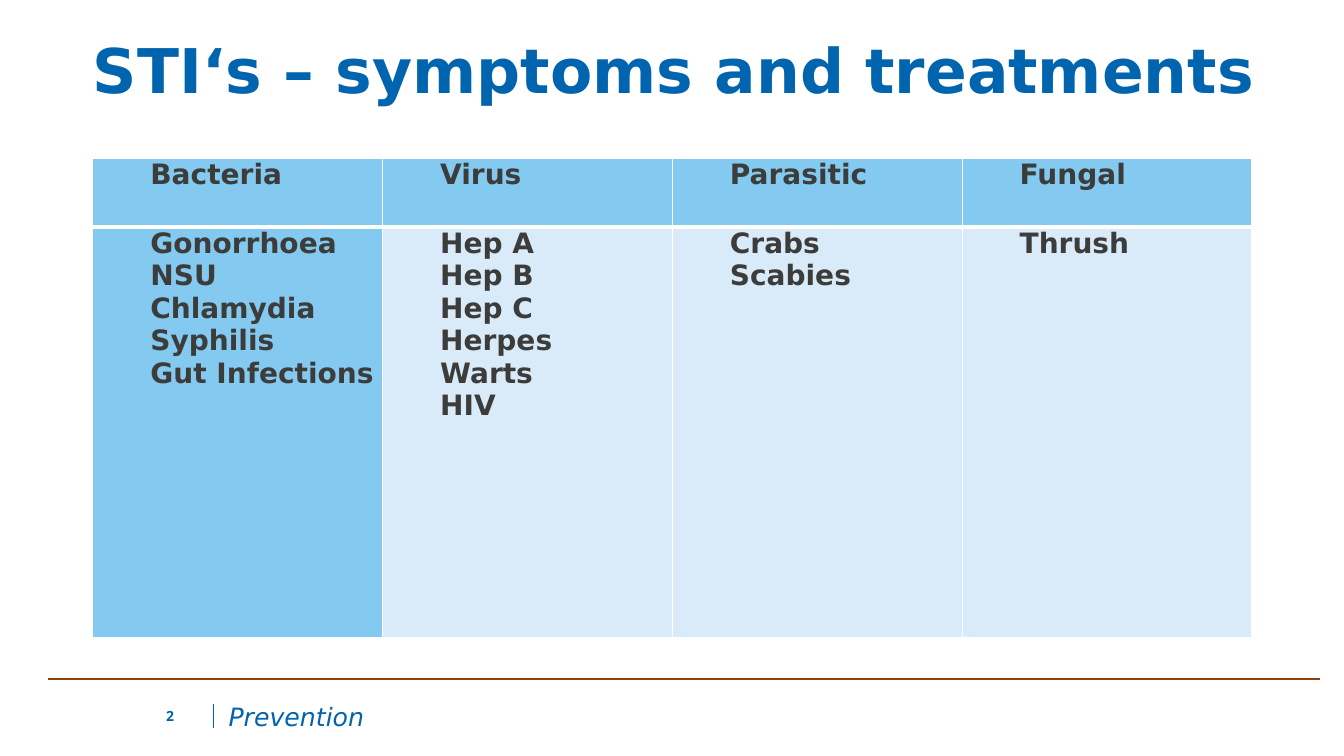
"""Build a slide that lists infections by type in a table."""
from dataclasses import dataclass

from lxml import etree
from pptx import Presentation
from pptx.dml.color import RGBColor
from pptx.enum.shapes import MSO_CONNECTOR
from pptx.enum.text import MSO_ANCHOR, PP_ALIGN
from pptx.oxml.ns import qn
from pptx.util import Cm, Pt

LINE = MSO_CONNECTOR.STRAIGHT
TOP, MIDDLE = MSO_ANCHOR.TOP, MSO_ANCHOR.MIDDLE
LEFT, CENTER = PP_ALIGN.LEFT, PP_ALIGN.CENTER
HEX = {"blue": "0064AE", "brown": "913E0B", "text": "3C3C3B",
       "head": "83C9F0", "body": "D9EBF9", "edge": "FFFFFF"}
SANS = "DejaVu Sans"


@dataclass
class Label:
    text: str
    box: tuple[float, float, float, float]
    style: dict


@dataclass
class Rule:
    start: tuple[float, float]
    end: tuple[float, float]
    color: str
    width: float


@dataclass
class Group:
    name: str
    items: list[str]


LABELS = [
    Label("STI‘s – symptoms and treatments", (1.32, 0.41, 31.34, 2.87),
          {"size": 44, "bold": True, "align": CENTER, "space": 0.9}),
    Label("Prevention", (5.51, 17.65, 11.43, 0.79), {"size": 18, "italic": True}),
    Label("2", (3.94, 17.65, 1.32, 0.79),
          {"size": 10, "bold": True, "face": "Open Sans"}),
]
RULES = [
    Rule((1.22, 17.12), (33.27, 17.12), "brown", 1.5),
    Rule((5.38, 18.34), (5.38, 17.75), "blue", 0.75),
]
GROUPS = [
    Group("Bacteria", ["Gonorrhoea", "NSU", "Chlamydia", "Syphilis", "Gut Infections"]),
    Group("Virus", ["Hep A", "Hep B", "Hep C", "Herpes", "Warts", "HIV"]),
    Group("Parasitic", ["Crabs", "Scabies"]),
    Group("Fungal", ["Thrush"]),
]
WIDTH = 29.21
ROWS = (1.73, 10.34)


def write(frame, lines: list[str], *, size: float, color: str = "blue",
          face: str = SANS, bold: bool = False, italic: bool = False,
          align=LEFT, space: float = 1.0, indent: float = 0) -> None:
    for pos, line in enumerate(lines):
        para = frame.paragraphs[0] if pos == 0 else frame.add_paragraph()
        para.alignment = align
        para.line_spacing = space
        para._p.get_or_add_pPr().set("marL", str(Cm(indent)))
        run = para.add_run()
        run.text = line
        font = run.font
        font.name, font.size = face, Pt(size)
        font.bold, font.italic = bold, italic
        font.color.rgb = RGBColor.from_string(HEX[color])


def add_label(slide, label: Label) -> None:
    frame = slide.shapes.add_textbox(*map(Cm, label.box)).text_frame
    frame.word_wrap = True
    frame.vertical_anchor = MIDDLE
    write(frame, [label.text], **label.style)


def add_rule(slide, rule: Rule) -> None:
    line = slide.shapes.add_connector(LINE, *map(Cm, rule.start + rule.end))
    line.line.color.rgb = RGBColor.from_string(HEX[rule.color])
    line.line.width = Pt(rule.width)
    etree.SubElement(line._element.spPr, qn("a:effectLst"))


def add_edges(cell, widths: dict[str, float]) -> None:
    props = cell._tc.get_or_add_tcPr()
    for pos, (side, width) in enumerate(widths.items()):
        edge = etree.Element(qn(f"a:ln{side}"), w=str(Pt(width)))
        fill = etree.SubElement(edge, qn("a:solidFill"))
        etree.SubElement(fill, qn("a:srgbClr"), val=HEX["edge"])
        props.insert(pos, edge)


def fill_cell(cell, lines: list[str], color: str, widths: dict[str, float]) -> None:
    cell.margin_left = cell.margin_right = Cm(0.18)
    cell.margin_top = cell.margin_bottom = 0
    cell.vertical_anchor = TOP
    cell.fill.solid()
    cell.fill.fore_color.rgb = RGBColor.from_string(HEX[color])
    add_edges(cell, widths)
    write(cell.text_frame, lines, size=20, color="text", bold=True, indent=1.27)


def add_groups(slide) -> None:
    table = slide.shapes.add_table(
        len(ROWS), len(GROUPS), Cm(2.34), Cm(3.99), Cm(WIDTH), Cm(sum(ROWS))).table
    for row, height in zip(table.rows, ROWS):
        row.height = Cm(height)
    for col, group in enumerate(GROUPS):
        table.columns[col].width = Cm(WIDTH / len(GROUPS))
        fill_cell(table.cell(0, col), [group.name], "head",
                  {"L": 1, "R": 1, "T": 1, "B": 3})
        fill_cell(table.cell(1, col), group.items, "body" if col else "head",
                  {"L": 1, "R": 1, "T": 3, "B": 1})


def main() -> None:
    deck = Presentation()
    deck.slide_width, deck.slide_height = Cm(33.87), Cm(19.05)
    slide = deck.slides.add_slide(deck.slide_layouts[6])
    for rule in RULES:
        add_rule(slide, rule)
    add_groups(slide)
    for label in LABELS:
        add_label(slide, label)
    deck.save("out.pptx")


if __name__ == "__main__":
    main()
